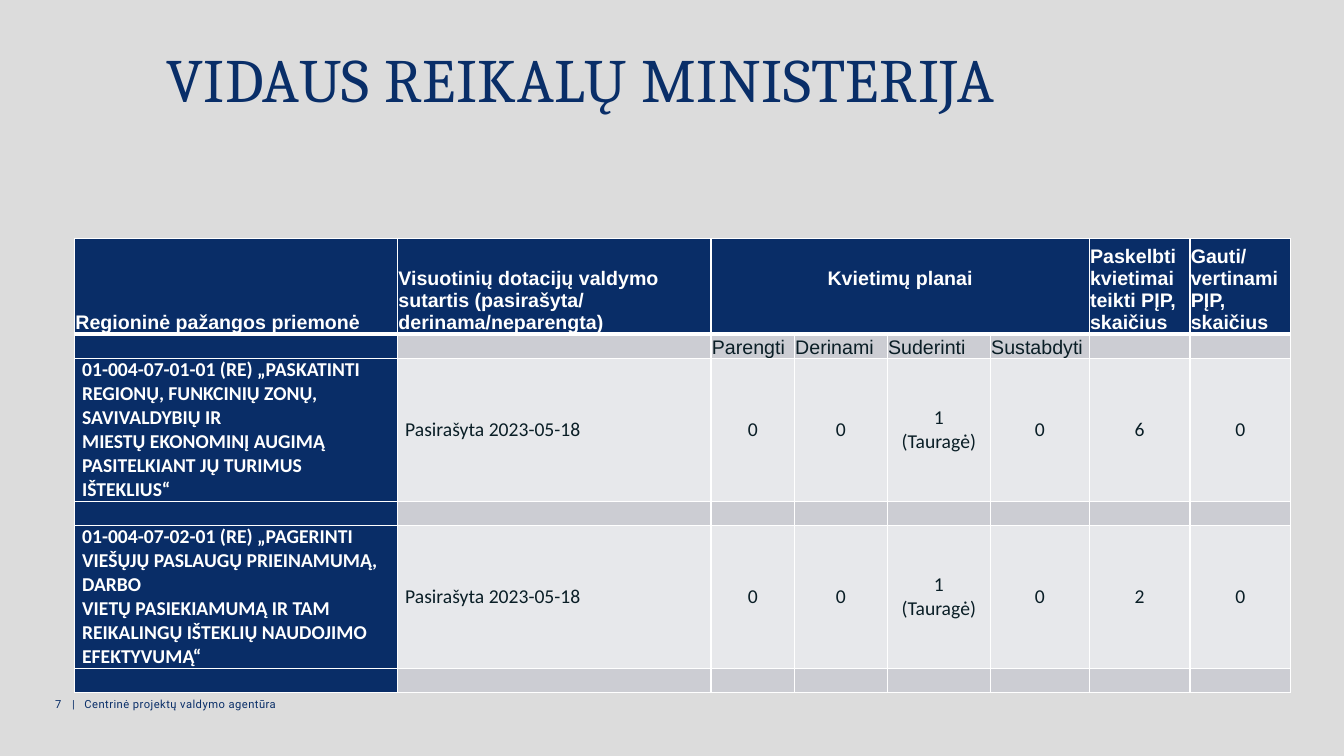
from lxml import etree
from pptx import Presentation
from pptx.dml.color import RGBColor
from pptx.enum import text
from pptx.oxml import ns
from pptx.util import Cm, Pt

# Content
TITLE = "VIDAUS REIKALŲ MINISTERIJA"
FOOTER = "7\t|\tCentrinė projektų valdymo agentūra"
HEADINGS = ["Regioninė pažangos priemonė",
            "Visuotinių dotacijų valdymo sutartis (pasirašyta/ derinama/neparengta)",
            "Kvietimų planai", "", "", "",
            "Paskelbti kvietimai teikti PĮP, skaičius",
            "Gauti/vertinami PĮP, skaičius"]
PLAN_STATES = ["", "", "Parengti", "Derinami", "Suderinti", "Sustabdyti", "", ""]
MEASURES = [
    ["01-004-07-01-01 (RE) „PASKATINTI REGIONŲ, FUNKCINIŲ ZONŲ, SAVIVALDYBIŲ IR\n"
     "MIESTŲ EKONOMINĮ AUGIMĄ PASITELKIANT JŲ TURIMUS IŠTEKLIUS“",
     "Pasirašyta 2023-05-18", "0", "0", "1 (Tauragė)", "0", "6", "0"],
    ["01-004-07-02-01 (RE) „PAGERINTI VIEŠŲJŲ PASLAUGŲ PRIEINAMUMĄ, DARBO\n"
     "VIETŲ PASIEKIAMUMĄ IR TAM REIKALINGŲ IŠTEKLIŲ NAUDOJIMO\nEFEKTYVUMĄ“",
     "Pasirašyta 2023-05-18", "0", "0", "1 (Tauragė)", "0", "2", "0"],
]
SPACER = [""] * len(HEADINGS)

# Format
COLOURS = {"page": "DCDCDC", "title": "092E68", "navy": "092D67", "band": "CCCDD3",
           "data": "E7E8EB", "ink": "0A1E26", "white": "FFFFFF"}
HEAD_FONT = {"name": "Arial", "size": Pt(14), "bold": True}
STATE_FONT = {"name": "Arial", "size": Pt(14), "bold": False}
MEASURE_FONT = {"name": "Calibri", "size": Pt(14), "bold": True}
DATA_FONT = {"name": "Calibri", "size": Pt(14), "bold": False}
TIGHT = {"margin_left": Cm(0.02), "margin_right": Cm(0.02), "margin_top": Cm(0.02),
         "margin_bottom": Cm(0), "vertical_anchor": text.MSO_ANCHOR.BOTTOM}
ROOMY = {"margin_left": Cm(0.19), "margin_right": Cm(0.19), "margin_top": Cm(0),
         "margin_bottom": Cm(0), "vertical_anchor": text.MSO_ANCHOR.MIDDLE}
COLUMN_WIDTHS = [8.14, 7.9, 2.1, 2.34, 2.6, 2.49, 2.54, 2.54]
ROWS = [("head", 2.24, HEADINGS), ("state", 0.57, PLAN_STATES)]
for measure in MEASURES:
    ROWS += [("data", 3.61, measure), ("spacer", 0.6, SPACER)]


def apply(target, values):
    for name, value in values.items():
        setattr(target, name, value)


def colour(name):
    return RGBColor.from_string(COLOURS[name])


def format_span(span, font, ink, spacing=None):
    apply(span.font, font)
    span.font.color.rgb = colour(ink)
    if spacing:
        span.font._element.set("spc", str(spacing))


def add_borders(cell, row_kind):
    widths = {"lnL": 1, "lnR": 1, "lnT": 3 if row_kind == "state" else 1,
              "lnB": 3 if row_kind == "head" else 1}
    properties = cell._tc.get_or_add_tcPr()
    for position, (side, width) in enumerate(widths.items()):
        line = etree.Element(ns.qn(f"a:{side}"), w=str(Pt(width)))
        fill = etree.SubElement(line, ns.qn("a:solidFill"))
        etree.SubElement(fill, ns.qn("a:srgbClr"), val=COLOURS["white"])
        properties.insert(position, line)


def fill_cell(cell, row_kind, column, words):
    first = column == 0
    navy = first or row_kind == "head"
    cell.fill.solid()
    cell.fill.fore_color.rgb = colour(
        "navy" if navy else "data" if row_kind == "data" else "band")
    add_borders(cell, row_kind)
    apply(cell, TIGHT if row_kind in ("head", "state") else ROOMY)
    if row_kind == "data" and first:
        cell.vertical_anchor = text.MSO_ANCHOR.TOP
    cell.text = words
    font = {"head": HEAD_FONT, "state": STATE_FONT}.get(
        row_kind, MEASURE_FONT if first else DATA_FONT)
    for para in cell.text_frame.paragraphs:
        if row_kind == "data" and column > 1:
            para.alignment = text.PP_ALIGN.CENTER
        for span in para.runs:
            format_span(span, font, "white" if navy else "ink")
        if not words:
            etree.SubElement(para._p, ns.qn("a:endParaRPr"), sz="1200")


# Page
deck = Presentation()
deck.slide_width, deck.slide_height = Cm(33.87), Cm(19.05)
page = deck.slides.add_slide(deck.slide_layouts[5])
page.background.fill.solid()
page.background.fill.fore_color.rgb = colour("page")

# Title
title = page.shapes.title
apply(title, {"left": Cm(3.94), "top": Cm(1.32), "width": Cm(28.6), "height": Cm(1.65)})
title.text = TITLE
apply(title.text_frame, {"auto_size": text.MSO_AUTO_SIZE.NONE, "word_wrap": True,
                         "vertical_anchor": text.MSO_ANCHOR.MIDDLE})
para = title.text_frame.paragraphs[0]
apply(para, {"alignment": text.PP_ALIGN.LEFT, "line_spacing": 0.8})
format_span(para.runs[0], {"name": "Cambria", "size": Pt(44)}, "title", 40)

# Footer
footer = page.shapes.add_textbox(Cm(1.14), Cm(17.45), Cm(8.13), Cm(1.02))
footer.text_frame.word_wrap = True
para = footer.text_frame.paragraphs[0]
tabs = etree.SubElement(para._p.get_or_add_pPr(), ns.qn("a:tabLst"))
for stop in (0.43, 0.74):
    etree.SubElement(tabs, ns.qn("a:tab"), pos=str(Cm(stop)), algn="l")
span = para.add_run()
span.text = FOOTER
format_span(span, {"name": "Roboto", "size": Pt(8)}, "title", 30)

# Table
frame = page.shapes.add_table(
    len(ROWS), len(COLUMN_WIDTHS), Cm(1.88), Cm(6.02),
    Cm(sum(COLUMN_WIDTHS)), Cm(sum(height for _, height, _ in ROWS)))
table = frame.table
apply(table, {"first_row": False, "horz_banding": False})
for column, width in zip(table.columns, COLUMN_WIDTHS):
    column.width = Cm(width)
for row, (kind, height, entries) in enumerate(ROWS):
    table.rows[row].height = Cm(height)
    for column, words in enumerate(entries):
        fill_cell(table.cell(row, column), kind, column, words)

# Heading over the four plan states
plans = table.cell(0, 2)
plans.merge(table.cell(0, 5))
plans.margin_bottom = Cm(1.11)
plans.text_frame.paragraphs[0].alignment = text.PP_ALIGN.CENTER

deck.save("out.pptx")
